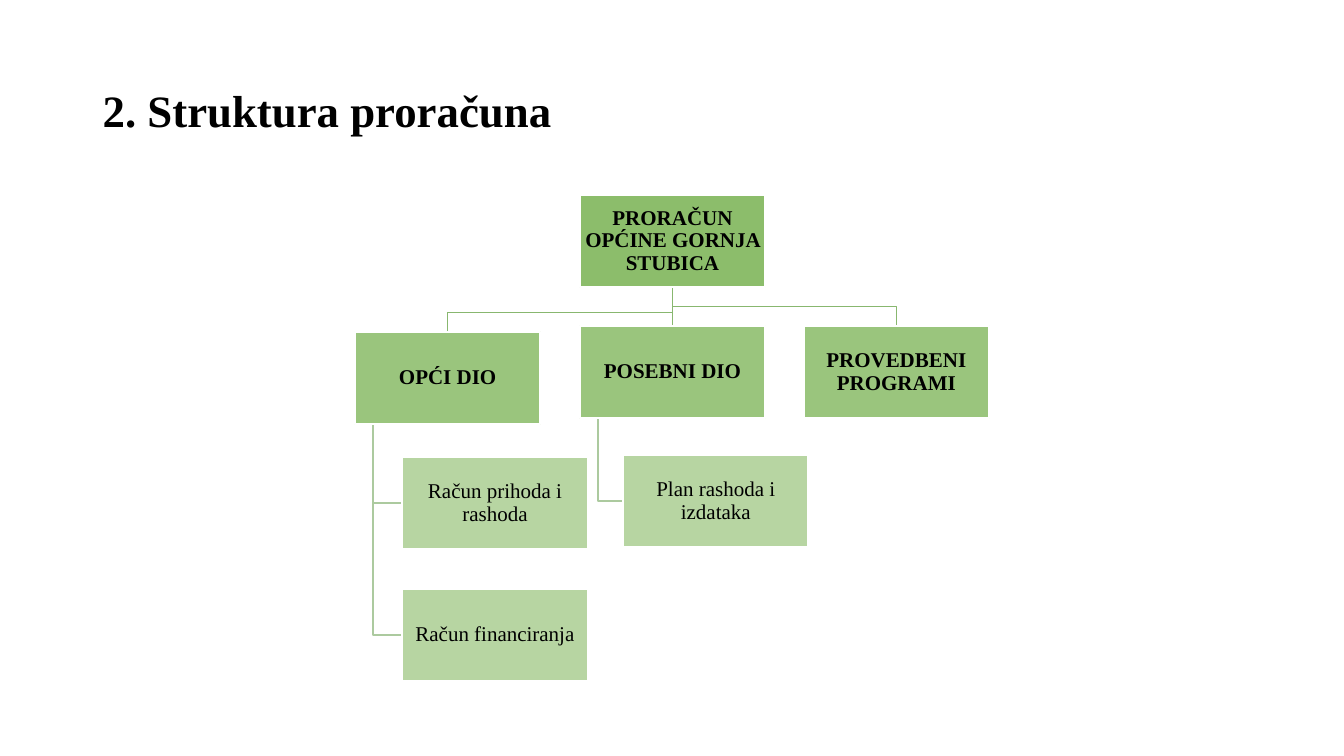
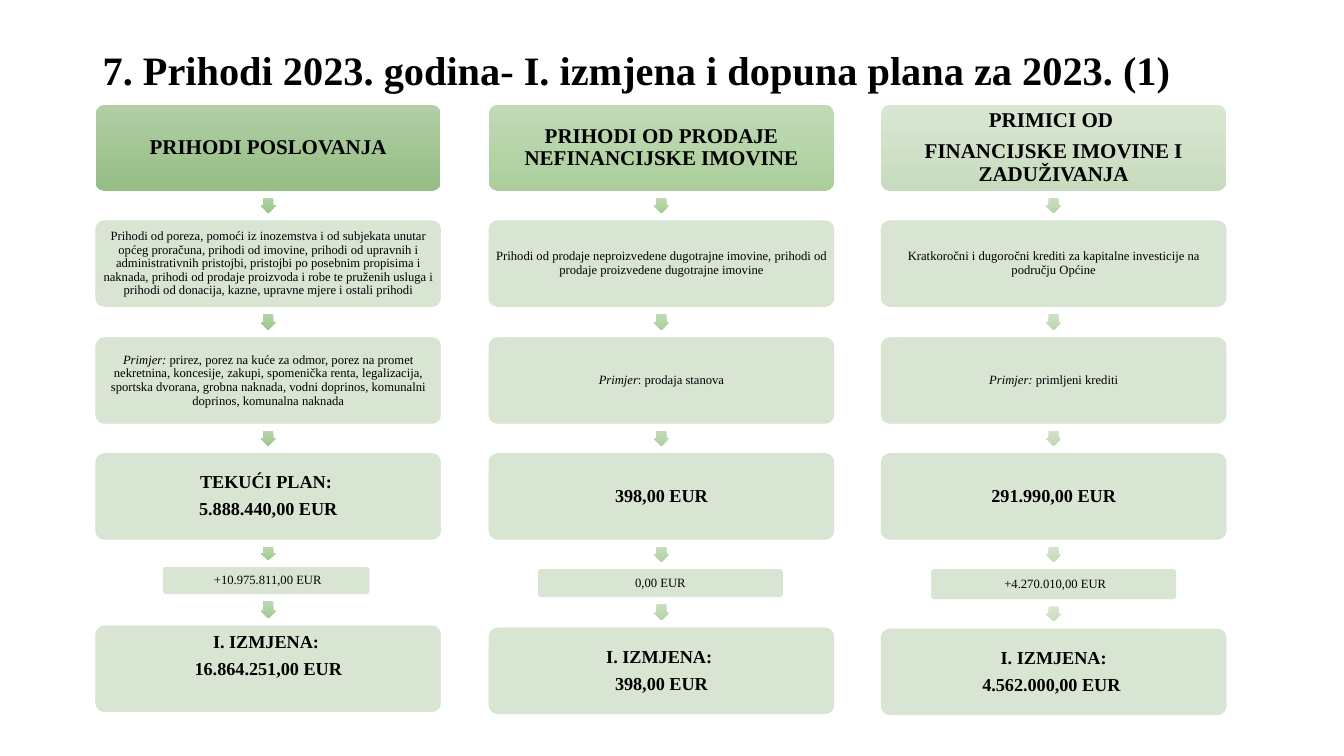
from collections import namedtuple

from lxml.etree import SubElement
from pptx import Presentation
from pptx.dml.color import RGBColor
from pptx.enum.shapes import MSO_CONNECTOR, MSO_SHAPE
from pptx.enum.text import MSO_ANCHOR, PP_ALIGN
from pptx.oxml.ns import qn
from pptx.util import Pt

PX = 9144  # one hundredth of an inch
FONT = "Times New Roman"
BLACK, WHITE, GREEN, PALE = "000000", "FFFFFF", "70AD47", "D5E3CF"
BRANCH_LINE, LEAF_LINE = "88B76F", "ACCA9F"
TREE_W, TREE_H = 184, 92
CARD_W, CARD_H = 342, 85

Node = namedtuple("Node", "left top text children", defaults=[()])
Column = namedtuple("Column", "left header_colors first_arrow last_arrow header "
                    "sources lead example plan change change_box revised revised_top pad",
                    defaults=[0])


def rgb(value):
    return RGBColor.from_string(value)


def assign(target, values):
    for name, value in values.items():
        setattr(target, name, value)


def blend(start, end, share):
    pairs = zip(bytes.fromhex(start), bytes.fromhex(end))
    return "".join(f"{round(a + (b - a) * share):02X}" for a, b in pairs)


def paint(fill, color, alpha=100):
    fill.solid()
    fill.fore_color.rgb = rgb(color)
    if alpha < 100:
        tint = fill._xPr.find(qn("a:solidFill"))[0]
        SubElement(tint, qn("a:alpha")).set("val", str(alpha * 1000))


class Deck:
    def __init__(self):
        self.prs = Presentation()
        assign(self.prs, {"slide_width": 1333 * PX, "slide_height": 750 * PX})
        self.shapes = None

    def new_slide(self, title, height, size):
        self.shapes = self.prs.slides.add_slide(self.prs.slide_layouts[6]).shapes
        heading = self.shapes.add_textbox(*(v * PX for v in (92, 40, 1150, height)))
        self.put_text(heading, [title], size, True, align=PP_ALIGN.LEFT, inset=(10, 5))

    def put_text(self, shape, paragraphs, size, bold=False, lead="",
                 align=PP_ALIGN.CENTER, inset=(1, 1), pad=0):
        frame = shape.text_frame
        across, down = (v * PX for v in inset)
        assign(frame, {"word_wrap": True, "vertical_anchor": MSO_ANCHOR.MIDDLE,
                       "margin_left": across, "margin_right": across,
                       "margin_top": down, "margin_bottom": down + pad * PX})
        for index, text in enumerate(paragraphs):
            paragraph = frame.add_paragraph() if index else frame.paragraphs[0]
            assign(paragraph, {"alignment": align, "line_spacing": 0.9,
                               "space_after": Pt(size * 0.4)})
            runs = [(text, False)]
            if lead and not index:
                runs.insert(0, (lead, True))
            for words, italic in runs:
                run = paragraph.add_run()
                run.text = words
                assign(run.font, {"name": FONT, "size": Pt(size), "bold": bold,
                                  "italic": italic})
                run.font.color.rgb = rgb(BLACK)

    def shape(self, kind, box, adjustments=()):
        shape = self.shapes.add_shape(kind, *(round(v * PX) for v in box))
        shape.shadow.inherit = False
        for index, value in enumerate(adjustments):
            shape.adjustments[index] = value
        return shape

    def gradient(self, shape, colors):
        shape.fill.gradient()
        shape.fill.gradient_angle = 270
        for stop, color in zip(shape.fill.gradient_stops, colors):
            stop.color.rgb = rgb(color)
        shape.line.fill.background()

    def tree_box(self, node, alpha, bold):
        box = self.shape(MSO_SHAPE.RECTANGLE, (node.left, node.top, TREE_W, TREE_H))
        paint(box.fill, GREEN, alpha)
        paint(box.line.fill, WHITE)
        box.line.width = Pt(1.5)
        self.put_text(box, [node.text], 15, bold)

    def tree_line(self, points, color):
        points = [(x * PX, y * PX) for x, y in points]
        straight = len({x for x, _ in points}) == 1
        if straight:
            line = self.shapes.add_connector(MSO_CONNECTOR.STRAIGHT, *points[0], *points[-1])
        else:
            builder = self.shapes.build_freeform(*points[0], scale=1.0)
            builder.add_line_segments(points[1:], close=False)
            line = builder.convert_to_shape()
            line.fill.background()
        paint(line.line.fill, color)
        line.line.width = Pt(1)
        if straight:
            SubElement(line._element.spPr, qn("a:effectLst"))
        else:
            line.shadow.inherit = False

    def header(self, box, colors, paragraphs):
        header = self.shape(MSO_SHAPE.ROUNDED_RECTANGLE, box, [0.1])
        self.gradient(header, colors)
        self.put_text(header, paragraphs, 15, True, inset=(2, 2))

    def card(self, box, paragraphs, size=9, lead="", pad=0):
        card = self.shape(MSO_SHAPE.ROUNDED_RECTANGLE, box, [0.1])
        for fill in (card.fill, card.line.fill):
            paint(fill, PALE, 90)
        card.line.width = Pt(0.5)
        large = size > 9
        self.put_text(card, paragraphs, size, large, lead, pad=pad,
                      inset=(2, 2) if large else (1, 1))

    def arrow(self, center, upper, lower, colors):
        length = lower - upper - 15
        box = (center - 7.5, (upper + lower - length) / 2, 15, length)
        self.gradient(self.shape(MSO_SHAPE.DOWN_ARROW, box, [0.667, 0.5]), colors)


BUDGET = Node(575, 193, "PRORAČUN OPĆINE GORNJA STUBICA", (
    Node(352, 329, "OPĆI DIO", (
        Node(399, 453, "Račun prihoda i rashoda"),
        Node(399, 584, "Račun financiranja"))),
    Node(575, 323, "POSEBNI DIO", (
        Node(618, 451, "Plan rashoda i izdataka"),)),
    Node(797, 323, "PROVEDBENI PROGRAMI")))

REVENUES = [
    Column(95, ("B1CEA4", "96BE85"), ("B3D3A5", "99C486"), ("BBD7AF", "A4CC91"),
           ["PRIHODI POSLOVANJA"],
           "Prihodi od poreza, pomoći iz inozemstva i od subjekata unutar općeg proračuna, "
           "prihodi od imovine, prihodi od upravnih i administrativnih pristojbi, pristojbi "
           "po posebnim propisima i naknada, prihodi od prodaje proizvoda i robe te pruženih "
           "usluga i prihodi od donacija, kazne, upravne mjere i ostali prihodi",
           "Primjer:",
           " prirez, porez na kuće za odmor, porez na promet nekretnina, koncesije, zakupi, "
           "spomenička renta, legalizacija, sportska dvorana, grobna naknada, vodni doprinos, "
           "komunalni doprinos, komunalna naknada",
           ["TEKUĆI PLAN: ", "5.888.440,00 EUR"],
           " +10.975.811,00 EUR", (162, 563, 204, 26),
           ["I. IZMJENA: ", "16.864.251,00 EUR"], 621, 25),
    Column(485, ("C1DAB6", "ABCE9B"), ("BED8B1", "A7CD95"), ("C8DEBF", "B4D3A6"),
           ["PRIHODI OD PRODAJE NEFINANCIJSKE IMOVINE"],
           "Prihodi od prodaje neproizvedene dugotrajne imovine, prihodi od prodaje "
           "proizvedene dugotrajne imovine",
           "Primjer", ": prodaja stanova", ["398,00 EUR"],
           "0,00 EUR", (534, 565, 242, 27),
           ["I. IZMJENA: ", "398,00 EUR"], 623),
    Column(874, ("D8E6D2", "C7DCBE"), ("CBDFC2", "B8D4AA"), ("D8E6D2", "C7DCBD"),
           ["PRIMICI OD ", "FINANCIJSKE IMOVINE I ZADUŽIVANJA"],
           "Kratkoročni i dugoročni krediti za kapitalne investicije na području Općine",
           "Primjer:", " primljeni krediti", ["291.990,00 EUR"],
           " +4.270.010,00 EUR", (924, 565, 242, 29),
           ["I. IZMJENA:", "4.562.000,00 EUR "], 624),
]


def draw_structure(deck):
    deck.new_slide("2. Struktura proračuna", 145, 32)
    # Lines lie beneath the boxes
    root_x, root_bottom = BUDGET.left + TREE_W // 2, BUDGET.top + TREE_H
    for part in BUDGET.children:
        part_x, bend = part.left + TREE_W // 2, part.top - 19
        deck.tree_line([(root_x, root_bottom), (root_x, bend),
                        (part_x, bend), (part_x, part.top)], BRANCH_LINE)
        for account in part.children:
            stem, middle = part.left + 18, account.top + TREE_H // 2
            deck.tree_line([(stem, part.top + TREE_H), (stem, middle),
                            (account.left, middle)], LEAF_LINE)
    # Boxes, lighter at each level
    deck.tree_box(BUDGET, 80, True)
    for part in BUDGET.children:
        deck.tree_box(part, 70, True)
        for account in part.children:
            deck.tree_box(account, 50, False)


def draw_revenues(deck):
    deck.new_slide("7. Prihodi 2023. godina- I. izmjena i dopuna plana za 2023. (1)", 64, 28.8)
    for column in REVENUES:
        tops = [104 + round(115.4 * row) for row in range(4)] + [column.revised_top]
        boxes = [(column.left, top, CARD_W, CARD_H) for top in tops]
        # Header and cards
        deck.header(boxes[0], column.header_colors, column.header)
        deck.card(boxes[1], [column.sources])
        deck.card(boxes[2], [column.example], lead=column.lead)
        deck.card(boxes[3], column.plan, 13)
        deck.card(column.change_box, [column.change])
        deck.card(boxes[4], column.revised, 13, pad=column.pad)
        # Arrows in the gaps, fading downwards
        chain = boxes[:4] + [column.change_box, boxes[4]]
        for step, (above, below) in enumerate(zip(chain, chain[1:])):
            colors = [blend(first, last, step / 4)
                      for first, last in zip(column.first_arrow, column.last_arrow)]
            deck.arrow(column.left + CARD_W / 2, above[1] + above[3], below[1], colors)


def main():
    deck = Deck()
    draw_structure(deck)
    draw_revenues(deck)
    deck.prs.save("out.pptx")


if __name__ == "__main__":
    main()
